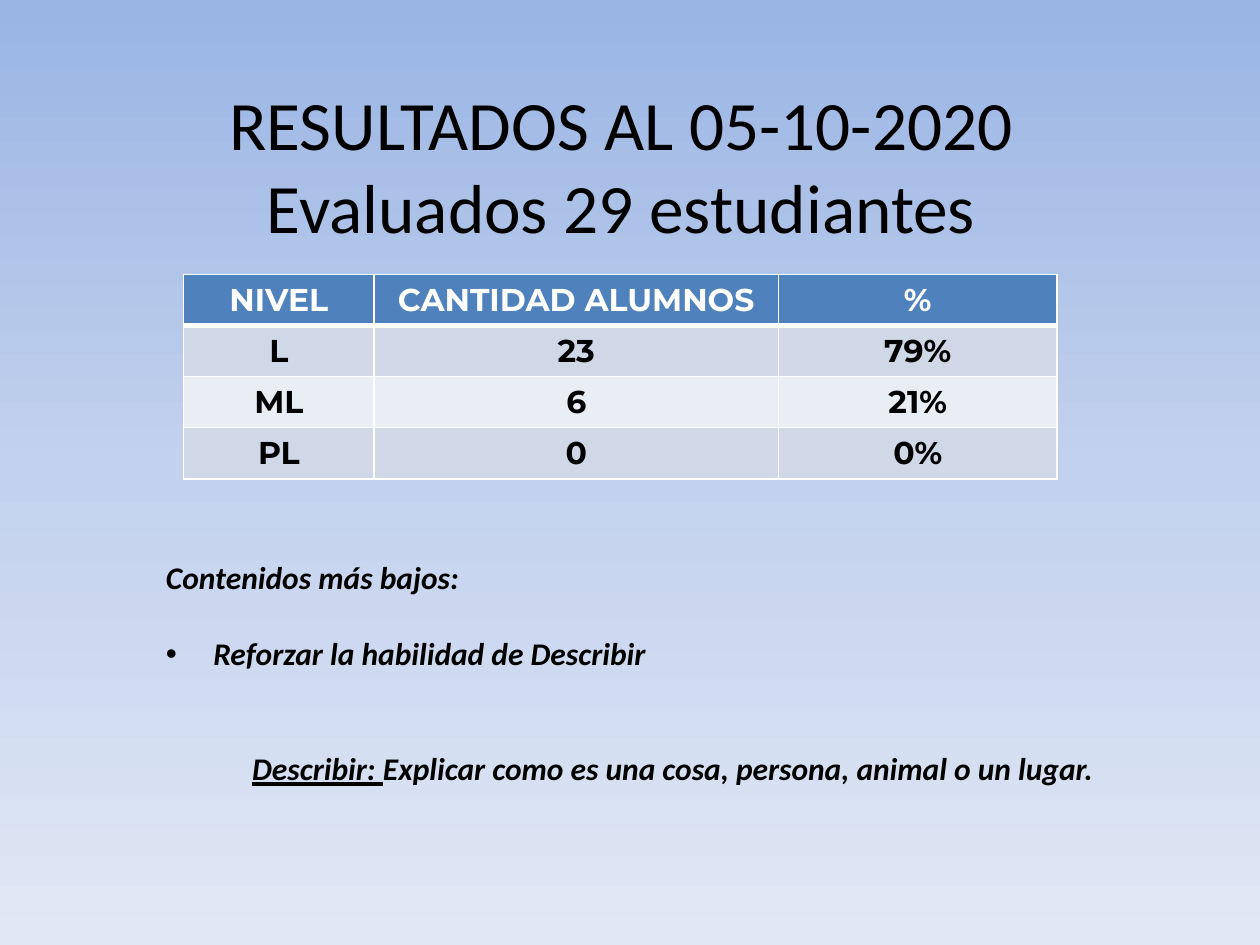
from copy import deepcopy

from lxml import etree
from pptx import Presentation
from pptx.dml.color import RGBColor
from pptx.enum.text import MSO_ANCHOR, PP_ALIGN
from pptx.oxml.ns import qn
from pptx.util import Pt

CENTER = PP_ALIGN.CENTER
LEFT = PP_ALIGN.LEFT
MIDDLE = MSO_ANCHOR.MIDDLE

BLACK = RGBColor(0x00, 0x00, 0x00)
WHITE = RGBColor(0xFF, 0xFF, 0xFF)
HEADER_BLUE = RGBColor(0x4F, 0x81, 0xBD)
BANDS = [RGBColor(0xD0, 0xD8, 0xE8), RGBColor(0xE9, 0xED, 0xF4)]
SKY = [
    (0, RGBColor(0x9A, 0xB5, 0xE4)),
    (0.5, RGBColor(0xC2, 0xD1, 0xED)),
    (1, RGBColor(0xE1, 0xE8, 0xF5)),
]

RESULTS = [
    ("NIVEL", "CANTIDAD ALUMNOS", "%"),
    ("L", "23", "79%"),
    ("ML", "6", "21%"),
    ("PL", "0", "0%"),
]
COLUMN_WIDTHS = (108.9, 231, 159.3)
LINE_HEIGHT = 22


def write_text(para, text, font="Calibri", size=18, color=BLACK, bold=False,
               italic=False, underline=False, align=LEFT):
    """Add text to a paragraph, turning newlines into line breaks."""
    para.alignment = align
    for index, line in enumerate(text.split("\n")):
        if index:
            para.add_line_break()
        span = para.add_run()
        span.text = line
        span.font.name = font
        span.font.size = Pt(size)
        span.font.color.rgb = color
        span.font.bold = bold
        span.font.italic = italic
        span.font.underline = underline


def add_text_frame(page, left, top, width, height):
    """Add a wrapping text box and return its text frame."""
    box = page.shapes.add_textbox(Pt(left), Pt(top), Pt(width), Pt(height))
    box.text_frame.word_wrap = True
    return box.text_frame


def paint_background(page):
    """Fill the page with a vertical gradient of three stops."""
    fill = page.background.fill
    fill.gradient()
    fill.gradient_angle = 270
    stop_list = page.background._cSld.find(".//" + qn("a:gsLst"))
    stop_list.append(deepcopy(stop_list[-1]))
    for stop, (position, color) in zip(fill.gradient_stops, SKY):
        stop.position = position
        stop.color.rgb = color


def add_title(page, left, top, width, height):
    """Place the centred two-line title."""
    frame = add_text_frame(page, left, top, width, height)
    frame.vertical_anchor = MIDDLE
    write_text(frame.paragraphs[0],
               "RESULTADOS AL 05-10-2020\nEvaluados 29 estudiantes",
               size=39.6, align=CENTER)


def set_borders(cell, top, bottom):
    """Draw white cell borders with the given top and bottom widths."""
    properties = cell._tc.get_or_add_tcPr()
    widths = {"a:lnL": 1, "a:lnR": 1, "a:lnT": top, "a:lnB": bottom}
    for index, (tag, width) in enumerate(widths.items()):
        line = etree.Element(qn(tag), w=str(Pt(width)))
        fill = etree.SubElement(line, qn("a:solidFill"))
        etree.SubElement(fill, qn("a:srgbClr"), val=str(WHITE))
        properties.insert(index, line)


def add_results(page, left, top, width, height):
    """Place the table of results by level."""
    table = page.shapes.add_table(len(RESULTS), len(COLUMN_WIDTHS), Pt(left),
                                  Pt(top), Pt(width), Pt(height)).table
    for column, column_width in zip(table.columns, COLUMN_WIDTHS):
        column.width = Pt(column_width)
    for row, values in enumerate(RESULTS):
        header = row == 0
        for column, value in enumerate(values):
            cell = table.cell(row, column)
            cell.fill.solid()
            cell.fill.fore_color.rgb = HEADER_BLUE if header else BANDS[(row - 1) % 2]
            set_borders(cell, top=3 if row == 1 else 1, bottom=3 if header else 1)
            write_text(cell.text_frame.paragraphs[0], value, font="Montserrat",
                       color=WHITE if header else BLACK, bold=True, align=CENTER)


def add_bullet(para, indent):
    """Give a paragraph a hanging round bullet."""
    properties = para._p.get_or_add_pPr()
    properties.set("marL", str(Pt(indent)))
    properties.set("indent", str(Pt(-indent)))
    etree.SubElement(properties, qn("a:buFont"), typeface="Arial")
    etree.SubElement(properties, qn("a:buChar"), char="•")


def add_findings(page, left, top, width, height):
    """Place the weakest contents and the definition below them."""
    frame = add_text_frame(page, left, top, width, height)
    style = {"bold": True, "italic": True}
    write_text(frame.paragraphs[0], "Contenidos más bajos:", **style)

    skill = frame.add_paragraph()
    skill.space_before = Pt(LINE_HEIGHT)
    write_text(skill, "Reforzar la habilidad de Describir", **style)
    add_bullet(skill, 27)

    definition = frame.add_paragraph()
    definition.space_before = Pt(2 * LINE_HEIGHT)
    style["align"] = CENTER
    write_text(definition, "\t", **style)
    write_text(definition, "Describir: ", underline=True, **style)
    write_text(definition, "Explicar como es una cosa, persona, animal o un lugar. ",
               **style)


def main():
    """Build and save the one-page deck."""
    deck = Presentation()
    deck.slide_width, deck.slide_height = Pt(720), Pt(540)
    page = deck.slides.add_slide(deck.slide_layouts[6])
    paint_background(page)
    add_title(page, 31, 49, 648, 90)
    add_results(page, 104.9, 156.8, sum(COLUMN_WIDTHS), 116.8)
    add_findings(page, 87.8, 315.4, 561.6, 181.4)
    deck.save("out.pptx")


if __name__ == "__main__":
    main()
